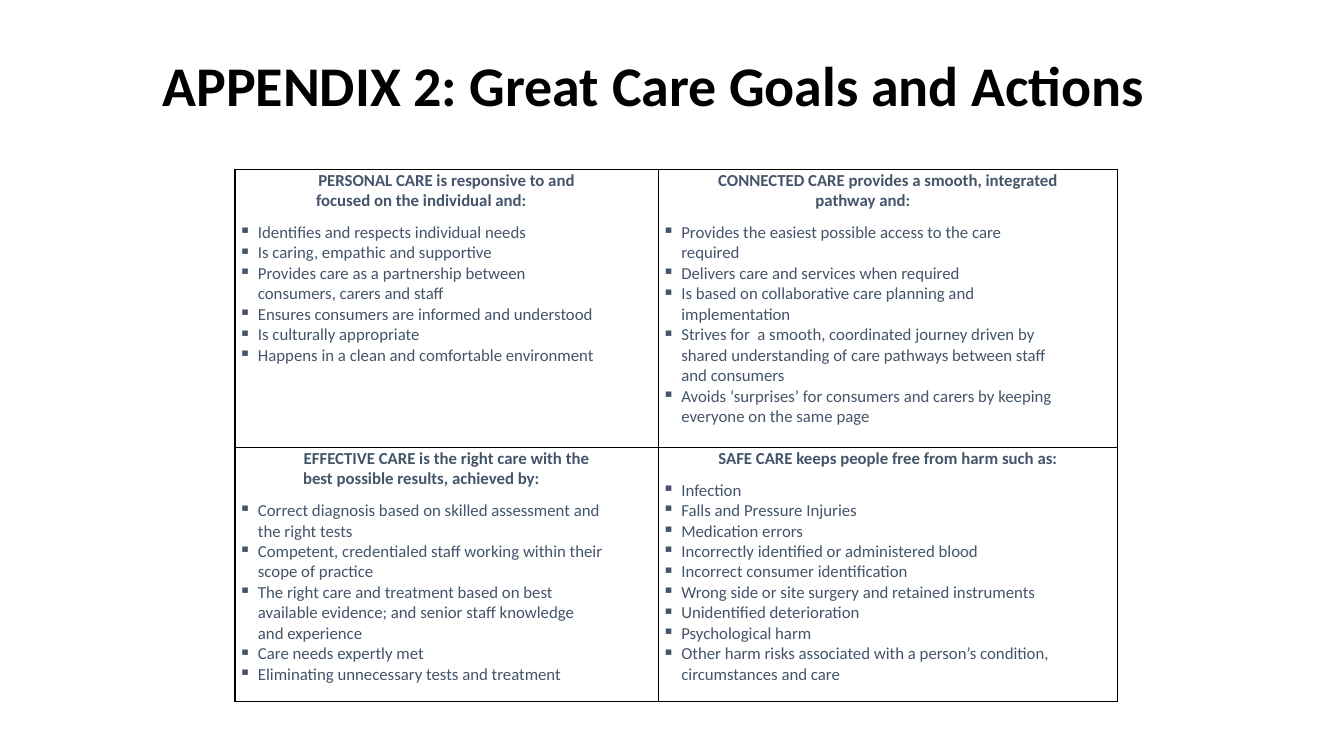
"""Build the appendix slide with the four Great Care goals and their actions."""
import pptx
import pptx.util
import pptx.dml.color
import pptx.enum.text
import pptx.oxml
import pptx.oxml.ns

Cm = pptx.util.Cm
Pt = pptx.util.Pt
COLORS = {"title": "000000", "text": "44546A", "border": "000000"}
FONT = "Calibri"
COLUMN_WIDTHS = [10.67, 11.58]
ROW_HEIGHTS = [7.01, 6.4]
GOALS = [
    [
        ("PERSONAL CARE is responsive to and focused on the individual and:", [
            "Identifies and respects individual needs",
            "Is caring, empathic and supportive",
            "Provides care as a partnership between consumers, carers and staff",
            "Ensures consumers are informed and understood",
            "Is culturally appropriate",
            "Happens in a clean and comfortable environment",
        ]),
        ("CONNECTED CARE provides a smooth, integrated pathway and:", [
            "Provides the easiest possible access to the care required",
            "Delivers care and services when required",
            "Is based on collaborative care planning and implementation",
            "Strives for  a smooth, coordinated journey driven by shared "
            "understanding of care pathways between staff and consumers",
            "Avoids ‘surprises’ for consumers and carers by keeping everyone "
            "on the same page",
        ]),
    ],
    [
        ("EFFECTIVE CARE is the right care with the best possible results, achieved by:", [
            "Correct diagnosis based on skilled assessment and the right tests",
            "Competent, credentialed staff working within their scope of practice",
            "The right care and treatment based on best available evidence; "
            "and senior staff knowledge and experience",
            "Care needs expertly met",
            "Eliminating unnecessary tests and treatment",
        ]),
        ("SAFE CARE keeps people free from harm such as:", [
            "Infection",
            "Falls and Pressure Injuries",
            "Medication errors",
            "Incorrectly identified or administered blood",
            "Incorrect consumer identification",
            "Wrong side or site surgery and retained instruments",
            "Unidentified deterioration",
            "Psychological harm",
            "Other harm risks associated with a person’s condition, "
            "circumstances and care",
        ]),
    ],
]


def style_font(font, size, color, bold):
    font.name = FONT
    font.size = Pt(size)
    font.bold = bold
    font.color.rgb = pptx.dml.color.RGBColor.from_string(COLORS[color])


def add_borders(cell):
    for side in ("lnL", "lnR", "lnT", "lnB"):
        cell._tc.get_or_add_tcPr().append(pptx.oxml.parse_xml(
            f'<a:{side} {pptx.oxml.ns.nsdecls("a")} w="{Pt(1)}"><a:solidFill>'
            f'<a:srgbClr val="{COLORS["border"]}"/></a:solidFill></a:{side}>'))


presentation = pptx.Presentation()
presentation.slide_width = Cm(33.87)
presentation.slide_height = Cm(19.05)
slide = presentation.slides.add_slide(presentation.slide_layouts[5])

heading = slide.shapes.title
heading.left, heading.top, heading.width, heading.height = Cm(3.84), Cm(0.38), Cm(29.21), Cm(3.68)
heading.text_frame.text = "APPENDIX 2: Great Care Goals and Actions"
heading.text_frame.auto_size = pptx.enum.text.MSO_AUTO_SIZE.NONE
heading.text_frame.vertical_anchor = pptx.enum.text.MSO_ANCHOR.MIDDLE
heading_line = heading.text_frame.paragraphs[0]
heading_line.alignment = pptx.enum.text.PP_ALIGN.LEFT
heading_line.line_spacing = 0.9
style_font(heading_line.runs[0].font, 40, "title", True)

goal_grid = slide.shapes.add_table(
    2, 2, Cm(5.92), Cm(4.27), Cm(sum(COLUMN_WIDTHS)), Cm(sum(ROW_HEIGHTS))).table
goal_grid.first_row = False
goal_grid.horz_banding = False
for column, width in zip(goal_grid.columns, COLUMN_WIDTHS):
    column.width = Cm(width)
for row, height in zip(goal_grid.rows, ROW_HEIGHTS):
    row.height = Cm(height)

for row_index, goal_row in enumerate(GOALS):
    for column_index, (goal, actions) in enumerate(goal_row):
        cell = goal_grid.cell(row_index, column_index)
        cell.margin_left = cell.margin_right = Cm(0.1)
        cell.margin_top, cell.margin_bottom = Cm(0.02), 0
        add_borders(cell)
        cell.fill.background()
        cell.text_frame.text = "\n".join([goal, *actions])
        for position, paragraph in enumerate(cell.text_frame.paragraphs):
            is_goal = position == 0
            style_font(paragraph.runs[0].font, 12, "text", is_goal)
            properties = paragraph._p.get_or_add_pPr()
            properties.set("marR", str(Cm(1.27)))
            if is_goal:
                paragraph.alignment = pptx.enum.text.PP_ALIGN.CENTER
                paragraph.space_after = Pt(8)
                properties.set("marL", "0")
                properties.set("indent", str(Cm(1.27)))
            else:
                properties.set("marL", str(Cm(0.48)))
                properties.set("indent", str(-Cm(0.48)))
                properties.append(pptx.oxml.parse_xml(
                    f'<a:buChar {pptx.oxml.ns.nsdecls("a")} char="▪"/>'))

presentation.save("out.pptx")
